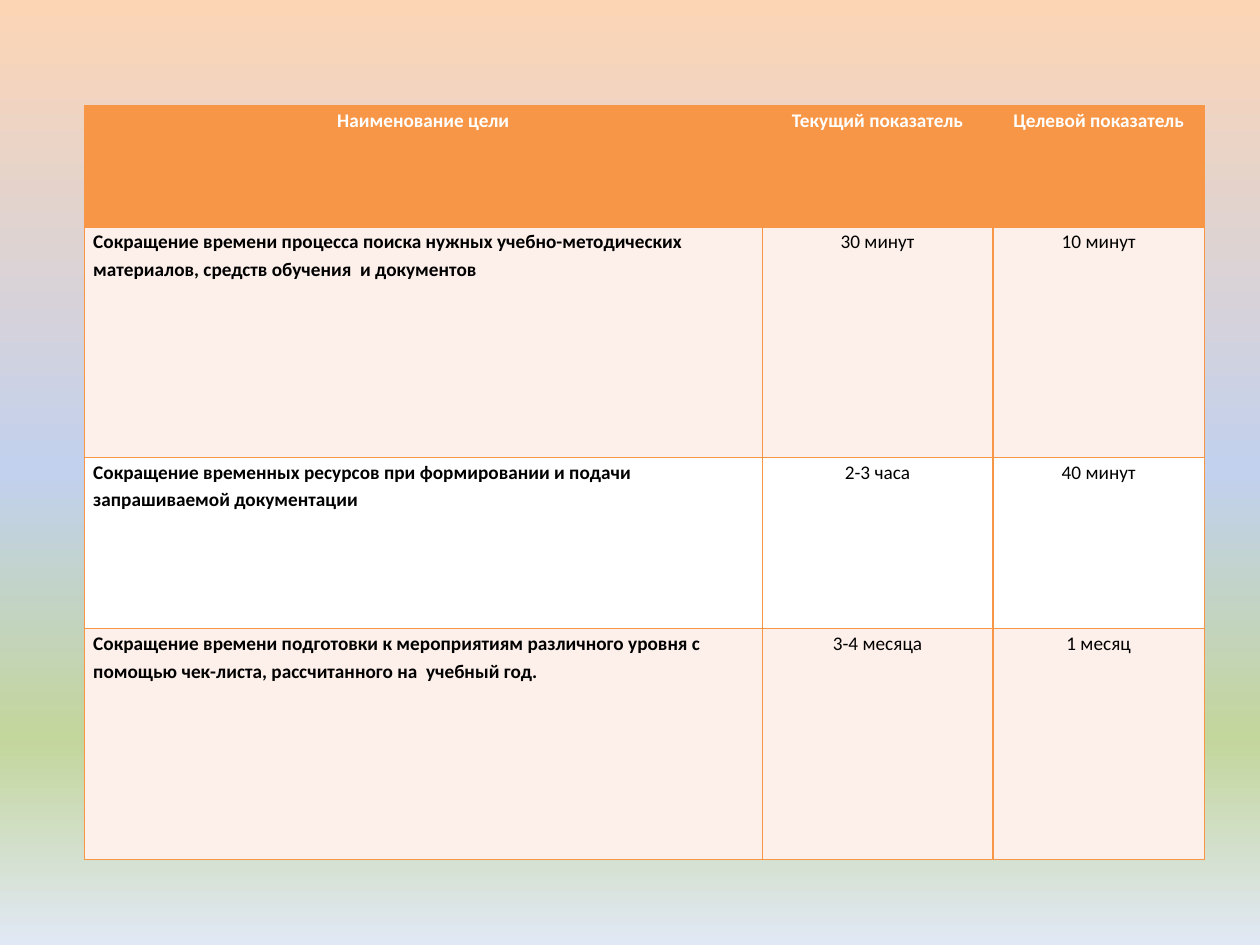
from copy import deepcopy

from lxml.etree import SubElement
from pptx import Presentation
from pptx.dml.color import RGBColor
from pptx.enum.text import PP_ALIGN
from pptx.oxml.ns import qn
from pptx.util import Inches, Pt

COLORS = {
    "accent": "F79646",
    "band": "FDEFE9",
    "white": "FFFFFF",
    "black": "000000",
}
BACKGROUND_STOPS = [(0, "FCD5B5"), (0.5, "C2D1ED"), (0.78, "C3D69B"), (1, "E1E8F5")]
COLUMN_WIDTHS = [5.38, 1.83, 1.68]
ROW_HEIGHTS = [0.96, 1.83, 1.36, 1.83]
GOALS = [
    ("Наименование цели", "Текущий показатель", "Целевой показатель"),
    ("Сокращение времени процесса поиска нужных учебно-методических материалов, "
     "средств обучения  и документов", "30 минут", "10 минут"),
    ("Сокращение временных ресурсов при формировании и подачи "
     "запрашиваемой документации", "2-3 часа", "40 минут"),
    ("Сокращение времени подготовки к мероприятиям различного уровня "
     "с помощью чек-листа, рассчитанного на  учебный год.", "3-4 месяца", "1 месяц"),
]


def rgb(name):
    return RGBColor.from_string(COLORS[name])


def paint_background(page):
    fill = page.background.fill
    fill.gradient()
    fill.gradient_angle = 270
    stop_list = page.element.find(".//" + qn("a:gsLst"))
    while len(stop_list) < len(BACKGROUND_STOPS):
        stop_list.append(deepcopy(stop_list[0]))
    for stop, (position, color) in zip(fill.gradient_stops, BACKGROUND_STOPS):
        stop.position = position
        stop.color.rgb = RGBColor.from_string(color)


def write_text(cell, text, *, color="black", bold=False, align=PP_ALIGN.CENTER):
    para = cell.text_frame.paragraphs[0]
    para.alignment = align
    para.line_spacing = 1.15
    span = para.add_run()
    span.text = text
    span.font.name = "Calibri"
    span.font.size = Pt(11)
    span.font.bold = bold
    span.font.color.rgb = rgb(color)


def outline_cell(cell, color, width):
    properties = cell._tc.get_or_add_tcPr()
    for side in ("a:lnL", "a:lnR", "a:lnT", "a:lnB"):
        line = SubElement(properties, qn(side), w=str(Pt(width)))
        solid = SubElement(line, qn("a:solidFill"))
        SubElement(solid, qn("a:srgbClr"), val=COLORS[color])


def format_cell(cell, fill):
    cell.margin_left = cell.margin_right = Inches(0.07)
    cell.margin_top = cell.margin_bottom = 0
    outline_cell(cell, "accent", 1)
    cell.fill.solid()
    cell.fill.fore_color.rgb = rgb(fill)


def add_goal_table(page):
    table = page.shapes.add_table(
        len(GOALS), len(COLUMN_WIDTHS), Inches(0.67), Inches(0.84),
        Inches(sum(COLUMN_WIDTHS)), Inches(sum(ROW_HEIGHTS))).table
    for column, width in zip(table.columns, COLUMN_WIDTHS):
        column.width = Inches(width)
    for row, height in zip(table.rows, ROW_HEIGHTS):
        row.height = Inches(height)

    for row_index, texts in enumerate(GOALS):
        header = row_index == 0
        fill = "accent" if header else "band" if row_index % 2 else "white"
        for column_index, text in enumerate(texts):
            cell = table.cell(row_index, column_index)
            goal_name = column_index == 0 and not header
            format_cell(cell, fill)
            write_text(cell, text,
                       color="white" if header else "black",
                       bold=header or goal_name,
                       align=PP_ALIGN.LEFT if goal_name else PP_ALIGN.CENTER)


def main():
    deck = Presentation()
    deck.slide_width = Inches(10)
    deck.slide_height = Inches(7.5)
    page = deck.slides.add_slide(deck.slide_layouts[6])
    paint_background(page)
    add_goal_table(page)
    deck.save("out.pptx")


if __name__ == "__main__":
    main()
